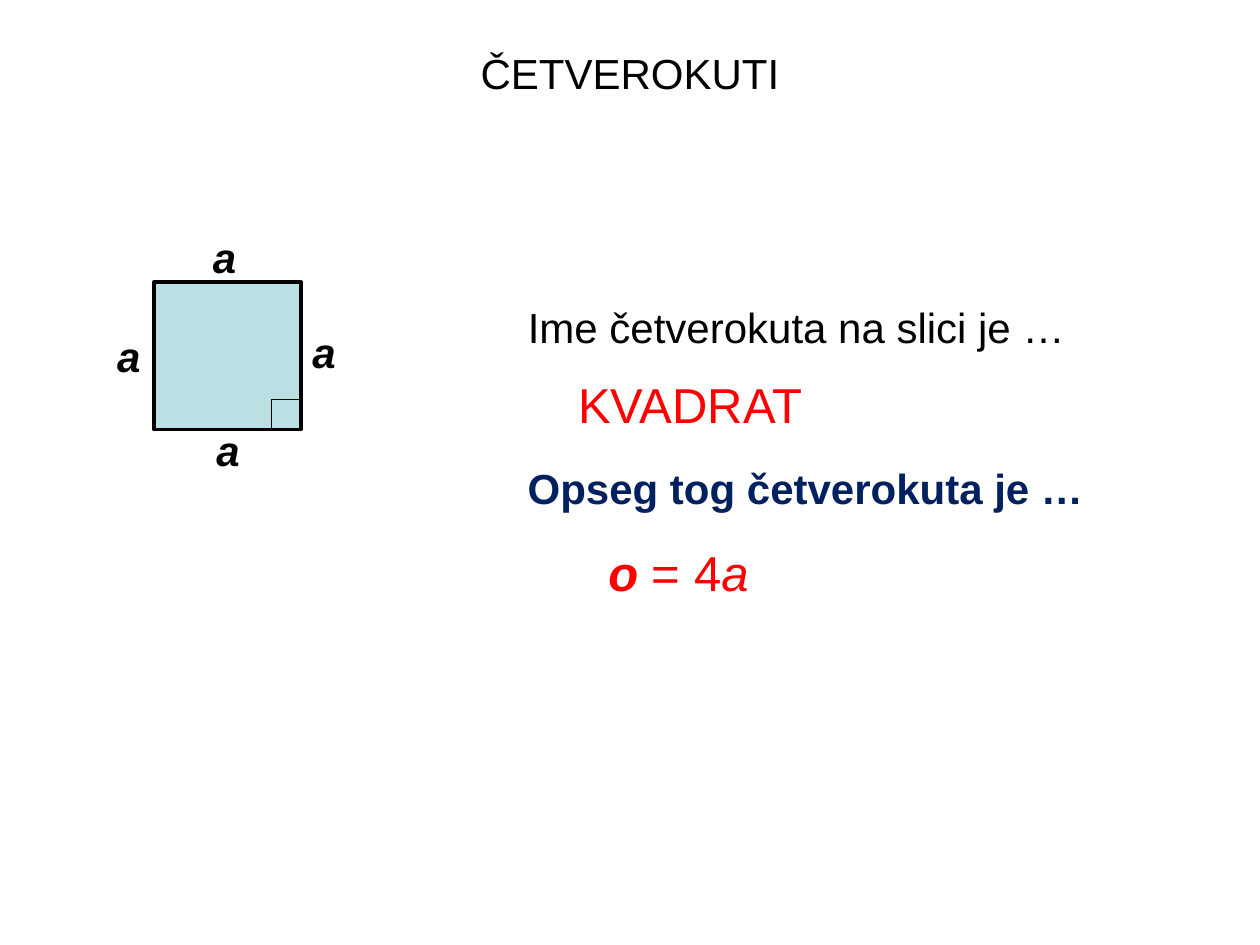
from dataclasses import dataclass

from pptx import Presentation
from pptx.dml.color import RGBColor
from pptx.enum import shapes, text
from pptx.util import Pt


@dataclass(frozen=True)
class Theme:
    font: str = "Arial"
    body: int = 24
    answer: int = 28
    black: str = "000000"
    navy: str = "002060"
    red: str = "FF0000"
    square_fill: str = "BBE0E3"


THEME = Theme()

# Each run: text, bold, italic
TITLE = [("ČETVEROKUTI", False, False)]
SIDE_LABEL = [("a", True, True)]

# left, top, width, size, colour, runs
STATEMENTS = [
    (294.5, 168.5, 444, THEME.body, THEME.black,
     [("Ime četverokuta na slici je …", False, False)]),
    (323.3, 210.2, 398, THEME.answer, THEME.red,
     [("KVADRAT", False, False)]),
    (294.5, 260.6, 346, THEME.body, THEME.navy,
     [("Opseg tog četverokuta je …", True, False)]),
    (340.6, 306.7, 380, THEME.answer, THEME.red,
     [("o ", True, True), ("= 4", False, False), ("a", False, True)]),
]

SQUARE_LEFT, SQUARE_TOP, SQUARE_SIDE = 87.9, 161.3, 84.2
CORNER_SIDE = 17.2
# Label offsets from the square's top-left corner: bottom, top, right, left
LABEL_OFFSETS = [(28.7, 77.8), (26.6, -32.4), (83.5, 21.6), (-28.1, 23.8)]
LABEL_WIDTH = 26


def add_text(slide, left, top, width, size, colour, runs,
             align=text.PP_ALIGN.LEFT):
    box = slide.shapes.add_textbox(Pt(left), Pt(top), Pt(width), Pt(size * 1.2 + 7.2))
    frame = box.text_frame
    frame.word_wrap = True
    frame.auto_size = text.MSO_AUTO_SIZE.SHAPE_TO_FIT_TEXT
    paragraph = frame.paragraphs[0]
    paragraph.alignment = align
    for content, bold, italic in runs:
        run = paragraph.add_run()
        run.text = content
        run.font.name = THEME.font
        run.font.size = Pt(size)
        run.font.bold = bold
        run.font.italic = italic
        run.font.color.rgb = RGBColor.from_string(colour)


def add_square(slide, left, top, side, line_width, fill=None):
    square = slide.shapes.add_shape(
        shapes.MSO_SHAPE.RECTANGLE, Pt(left), Pt(top), Pt(side), Pt(side))
    square.shadow.inherit = False
    if fill:
        square.fill.solid()
        square.fill.fore_color.rgb = RGBColor.from_string(fill)
    else:
        square.fill.background()
    square.line.color.rgb = RGBColor.from_string(THEME.black)
    square.line.width = Pt(line_width)


def main():
    presentation = Presentation()
    presentation.slide_width, presentation.slide_height = Pt(720), Pt(540)
    slide = presentation.slides.add_slide(presentation.slide_layouts[6])

    add_text(slide, 103.7, 23.8, 512.6, THEME.body, THEME.black, TITLE,
             text.PP_ALIGN.CENTER)

    add_square(slide, SQUARE_LEFT, SQUARE_TOP, SQUARE_SIDE, 2, THEME.square_fill)
    for across, down in LABEL_OFFSETS:
        add_text(slide, SQUARE_LEFT + across, SQUARE_TOP + down, LABEL_WIDTH,
                 THEME.body, THEME.black, SIDE_LABEL)
    inset = SQUARE_SIDE - CORNER_SIDE
    add_square(slide, SQUARE_LEFT + inset, SQUARE_TOP + inset, CORNER_SIDE, 0.25)

    for statement in STATEMENTS:
        add_text(slide, *statement)

    presentation.save("out.pptx")


if __name__ == "__main__":
    main()
